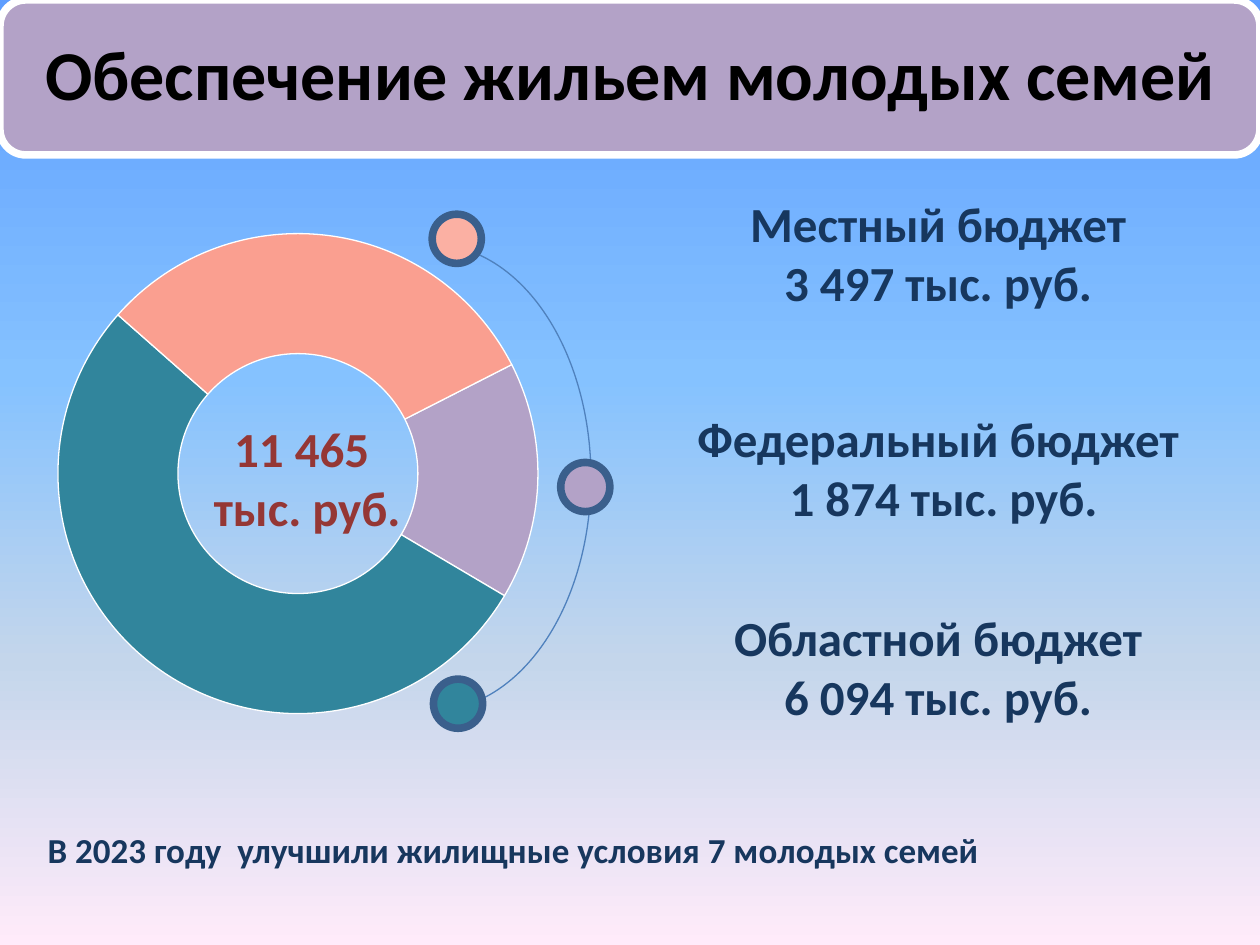
from dataclasses import dataclass

from lxml import etree
from pptx import Presentation
from pptx.chart.data import CategoryChartData
from pptx.dml.color import RGBColor
from pptx.enum.chart import XL_CHART_TYPE
from pptx.enum.shapes import MSO_SHAPE
from pptx.enum.text import MSO_ANCHOR, MSO_AUTO_SIZE, PP_ALIGN
from pptx.oxml.ns import qn
from pptx.util import Inches, Pt

ARC, OVAL, ROUNDED = MSO_SHAPE.ARC, MSO_SHAPE.OVAL, MSO_SHAPE.ROUNDED_RECTANGLE
CENTER, JUSTIFY = PP_ALIGN.CENTER, PP_ALIGN.JUSTIFY
MIDDLE, NO_FIT = MSO_ANCHOR.MIDDLE, MSO_AUTO_SIZE.NONE
DOUGHNUT = XL_CHART_TYPE.DOUGHNUT


@dataclass(frozen=True)
class Theme:
    font: str = "Calibri"
    # Colours
    sky: tuple = ((0, "5E9EFF"), (40, "85C2FF"), (70, "C4D6EB"), (100, "FFEBFA"))
    local: str = "FA9F90"
    local_dot: str = "FBB0A3"
    federal: str = "B3A2C7"
    regional: str = "31859C"
    white: str = "FFFFFF"
    title: str = "000000"
    text: str = "17375E"
    total: str = "953735"
    arc: str = "4F81BD"
    dot_line: str = "3A5F8C"
    # Type sizes and line widths
    title_size: int = 40
    label_size: int = 28
    note_size: int = 20
    chart_size: int = 18
    thin: float = 0.75
    thick: float = 4.33


def rgb(code):
    return RGBColor.from_string(code)


def inches(box):
    return [Inches(v) for v in box]


class SlideBuilder:
    def __init__(self, prs, theme):
        self.theme = theme
        self.s = prs.slides.add_slide(prs.slide_layouts[5])

    def background(self, stops):
        fill = self.s.background.fill
        fill.gradient()
        fill.gradient_angle = 270
        gs_list = next(self.s._element.iter(qn("a:gsLst")))
        for gs in list(gs_list):
            gs_list.remove(gs)
        for position, colour in stops:
            gs = etree.SubElement(gs_list, qn("a:gs"), pos=str(position * 1000))
            etree.SubElement(gs, qn("a:srgbClr"), val=colour)

    def shape(self, kind, box, fill=None, line=None, width=0):
        sp = self.s.shapes.add_shape(kind, *inches(box))
        sp.shadow.inherit = False
        if fill:
            sp.fill.solid()
            sp.fill.fore_color.rgb = rgb(fill)
        else:
            sp.fill.background()
        if line:
            sp.line.color.rgb = rgb(line)
            sp.line.width = Pt(width)
        else:
            sp.line.fill.background()
        return sp

    def put_text(self, sp, lines, size, colour, align=CENTER):
        tf = sp.text_frame
        tf.word_wrap = True
        tf.auto_size = NO_FIT
        tf.vertical_anchor = MIDDLE
        for i, line in enumerate(lines):
            p = tf.add_paragraph() if i else tf.paragraphs[0]
            p.alignment = align
            r = p.add_run()
            r.text = line
            r.font.name = self.theme.font
            r.font.size = Pt(size)
            r.font.bold = True
            r.font.color.rgb = rgb(colour)
        return tf

    def title(self, text, box):
        sp = self.s.shapes.title
        sp.left, sp.top, sp.width, sp.height = inches(box)
        tf = self.put_text(sp, [text], self.theme.title_size, self.theme.title)
        tf.margin_left = tf.margin_right = Inches(0.17)
        tf.margin_top = tf.margin_bottom = Inches(0.17)
        tf.paragraphs[0].line_spacing = 0.9
        # Bring the title in front of its banner
        self.s.shapes._spTree.append(sp._element)

    def text(self, lines, box, size, align=CENTER):
        sp = self.s.shapes.add_textbox(*inches(box))
        self.put_text(sp, lines, size, self.theme.text, align)

    def dot(self, left, top, fill):
        self.shape(OVAL, (left, top, 0.39, 0.39), fill,
                   self.theme.dot_line, self.theme.thick)

    def doughnut(self, box, values, colours, start):
        data = CategoryChartData()
        data.categories = [str(i + 1) for i in range(len(values))]
        data.add_series("Series 1", values)
        chart = self.s.shapes.add_chart(DOUGHNUT, *inches(box), data).chart
        chart.has_legend = chart.has_title = False
        chart.font.name = self.theme.font
        chart.font.size = Pt(self.theme.chart_size)
        chart.font.color.rgb = rgb(self.theme.title)
        series = chart.plots[0].series[0]
        for i, colour in enumerate(colours):
            fmt = series.points[i].format
            fmt.fill.solid()
            fmt.fill.fore_color.rgb = rgb(colour)
            fmt.line.color.rgb = rgb(self.theme.white)
            fmt.line.width = Pt(self.theme.thin)
        # Ring rotation, hole and plot area
        space = chart._chartSpace
        next(space.iter(qn("c:firstSliceAng"))).set("val", str(start))
        next(space.iter(qn("c:holeSize"))).set("val", "50")
        plot_area = next(space.iter(qn("c:plotArea")))
        for old in plot_area.findall(qn("c:layout")):
            plot_area.remove(old)
        layout = etree.Element(qn("c:layout"))
        manual = etree.SubElement(layout, qn("c:manualLayout"))
        settings = (("layoutTarget", "inner"), ("xMode", "edge"), ("yMode", "edge"),
                    ("x", "0.06"), ("y", "0.03"), ("w", "0.88"), ("h", "0.94"))
        for name, value in settings:
            etree.SubElement(manual, qn("c:" + name), val=value)
        plot_area.insert(0, layout)


def main():
    theme = Theme()
    prs = Presentation()
    prs.slide_width, prs.slide_height = Inches(10), Inches(7.5)
    b = SlideBuilder(prs, theme)
    b.background(theme.sky)

    # Arc joining the budget markers
    arc = b.shape(ARC, (2.17, 1.94, 2.52, 3.7), line=theme.arc, width=theme.thin)
    arc.adjustments[0], arc.adjustments[1] = 162.95, 52.91

    # Title banner
    b.shape(ROUNDED, (0, 0, 10, 1.23), theme.federal, theme.white, theme.thick)
    b.title("Обеспечение жильем молодых семей", (0.06, 0.06, 9.88, 1.11))

    # Budget shares with the total in the middle
    b.doughnut((0.2, 1.73, 4.33, 4.06), (16, 53, 31),
               (theme.federal, theme.regional, theme.local), start=63)
    total = b.shape(OVAL, (0.98, 3.04, 2.83, 1.5))
    b.put_text(total, ["11 465", " тыс. руб."], theme.label_size, theme.total)

    # Markers and budget labels: dot place, colour, label top and height, lines
    budgets = (
        (3.43, 1.7, theme.local_dot, 1.39, 1.22,
         ["Местный бюджет", "3 497 тыс. руб."]),
        (4.45, 3.67, theme.federal, 3.04, 1.34,
         ["Федеральный бюджет", " 1 874 тыс. руб."]),
        (3.44, 5.39, theme.regional, 4.54, 1.5,
         ["Областной бюджет", "6 094 тыс. руб."]),
    )
    for left, top, colour, label_top, height, lines in budgets:
        b.dot(left, top, colour)
        b.text(lines, (5.16, label_top, 4.57, height), theme.label_size)

    # Result of the year
    b.text(["В 2023 году  улучшили жилищные условия 7 молодых семей"],
           (0.28, 6.19, 9.45, 1.1), theme.note_size, JUSTIFY)

    prs.save("out.pptx")


if __name__ == "__main__":
    main()
